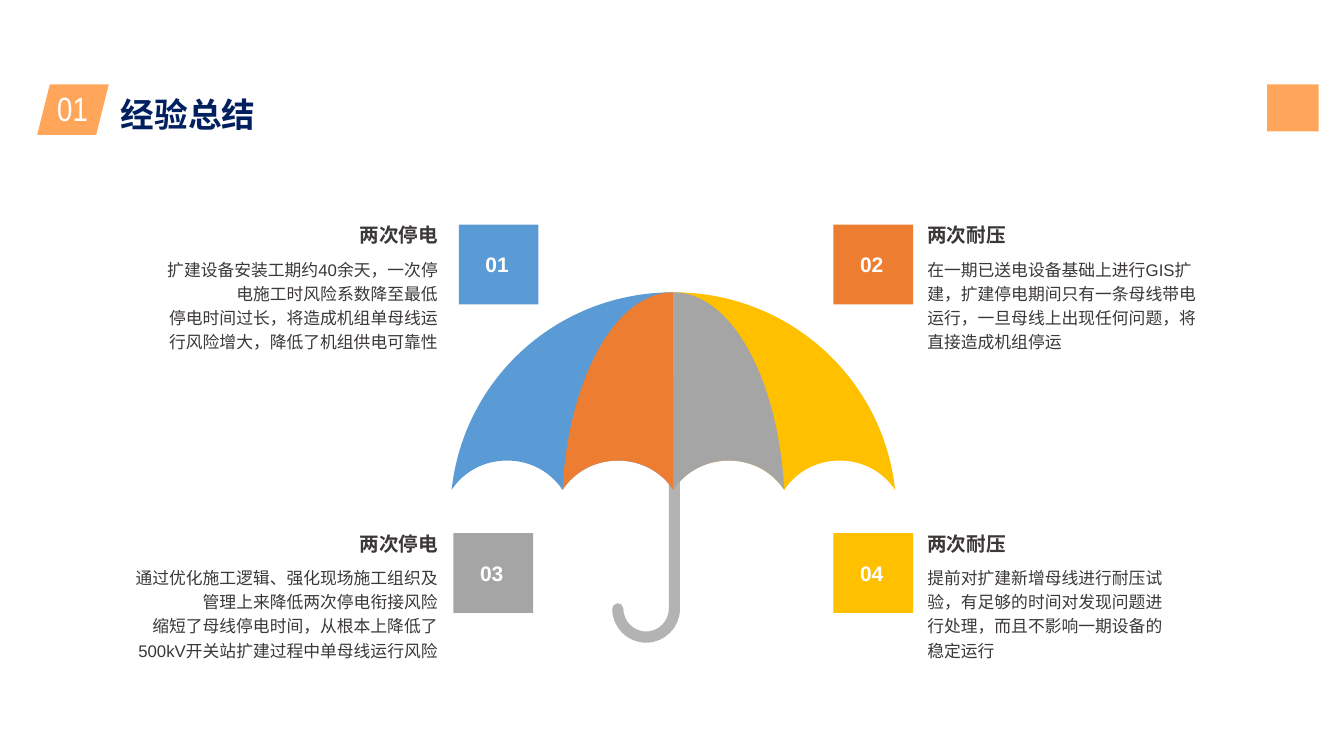
from dataclasses import dataclass

from lxml.etree import SubElement
from pptx import Presentation
from pptx.dml.color import RGBColor
from pptx.enum.lang import MSO_LANGUAGE_ID
from pptx.enum.shapes import MSO_SHAPE
from pptx.enum.text import MSO_ANCHOR, MSO_AUTO_SIZE, PP_ALIGN
from pptx.oxml.ns import qn
from pptx.shapes.autoshape import Shape
from pptx.shapes.shapetree import GroupShapes, SlideShapes
from pptx.text.text import TextFrame
from pptx.util import Pt

Point = tuple[float, float]
Segment = list[Point]

WHITE = RGBColor(0xFF, 0xFF, 0xFF)
NAVY = RGBColor(0x00, 0x20, 0x60)
CHARCOAL = RGBColor(0x3B, 0x38, 0x37)
PEACH = RGBColor(0xFF, 0xA6, 0x5B)
BLUE = RGBColor(0x5B, 0x9B, 0xD5)
ORANGE = RGBColor(0xED, 0x7D, 0x31)
GRAY = RGBColor(0xA5, 0xA5, 0xA5)
GOLD = RGBColor(0xFF, 0xC0, 0x00)
HANDLE_GRAY = RGBColor(0xB3, 0xB3, 0xB3)

SPINE_X, APEX_Y, RIM_Y = 481, 208.8, 349.9
SCALLOP_WIDTH, SCALLOP_Y = 79.2, 329
BADGE_SIZE = 56.9


@dataclass(frozen=True)
class Lesson:
    number: str
    heading: str
    details: list[str]
    top: float
    badge_left: float
    heading_left: float
    heading_width: float
    details_left: float
    details_width: float
    align: PP_ALIGN
    color: RGBColor


@dataclass(frozen=True)
class Panel:
    start: int
    end: int
    color: RGBColor


LESSONS = [
    Lesson("01", "两次停电",
           ["扩建设备安装工期约40余天，一次停电施工时风险系数降至最低",
            "停电时间过长，将造成机组单母线运行风险增大，降低了机组供电可靠性"],
           148.3, 327.7, 210.6, 102.4, 111.4, 201.4, PP_ALIGN.RIGHT, BLUE),
    Lesson("02", "两次耐压",
           ["在一期已送电设备基础上进行GIS扩建，扩建停电期间只有一条母线带电运行，"
            "一旦母线上出现任何问题，将直接造成机组停运"],
           148.3, 595.3, 662.4, 120.2, 662.4, 200.2, PP_ALIGN.LEFT, ORANGE),
    Lesson("03", "两次停电",
           ["通过优化施工逻辑、强化现场施工组织及管理上来降低两次停电衔接风险",
            "缩短了母线停电时间，从根本上降低了500kV开关站扩建过程中单母线运行风险"],
           368.7, 323.9, 210.6, 102.4, 88.6, 224.2, PP_ALIGN.RIGHT, GRAY),
    Lesson("04", "两次耐压",
           ["提前对扩建新增母线进行耐压试验，有足够的时间对发现问题进行处理，"
            "而且不影响一期设备的稳定运行"],
           368.7, 595.3, 662.4, 120.2, 662.4, 180, PP_ALIGN.LEFT, GOLD),
]

PANELS = [Panel(0, 2, GOLD), Panel(-2, 0, BLUE), Panel(-1, 0, ORANGE), Panel(0, 1, GRAY)]


def write_text(frame: TextFrame, paragraphs: list[str], *, size: float, color: RGBColor,
               font: str = "Arial", bold: bool = False, align: PP_ALIGN = PP_ALIGN.LEFT,
               anchor: MSO_ANCHOR = MSO_ANCHOR.TOP, spacing: float = 1.0,
               side_inset: float = 0, end_inset: float = 0) -> None:
    frame.word_wrap = True
    frame.auto_size = MSO_AUTO_SIZE.NONE
    frame.vertical_anchor = anchor
    frame.margin_left = frame.margin_right = Pt(side_inset)
    frame.margin_top = frame.margin_bottom = Pt(end_inset)
    frame.text = "\n".join(paragraphs)
    for paragraph in frame.paragraphs:
        paragraph.alignment = align
        paragraph.line_spacing = spacing
        paragraph.space_before = Pt(0)
        run_font = paragraph.runs[0].font
        run_font.name, run_font.size, run_font.bold = font, Pt(size), bold
        run_font.color.rgb = color
        run_font.language_id = MSO_LANGUAGE_ID.SIMPLIFIED_CHINESE
        SubElement(paragraph.runs[0]._r.rPr, qn("a:ea"), typeface=font)


def place(part: Shape, left: float, top: float, width: float, height: float) -> None:
    part.left, part.top, part.width, part.height = Pt(left), Pt(top), Pt(width), Pt(height)


def add_text(shapes: SlideShapes, left: float, top: float, width: float,
             height: float) -> TextFrame:
    return shapes.add_textbox(Pt(left), Pt(top), Pt(width), Pt(height)).text_frame


def paint(part: Shape, color: RGBColor) -> None:
    part.shadow.inherit = False
    part.fill.solid()
    part.fill.fore_color.rgb = color
    part.line.fill.background()


def add_block(shapes: SlideShapes, preset: MSO_SHAPE, left: float, top: float,
              width: float, height: float, color: RGBColor) -> None:
    paint(shapes.add_shape(preset, Pt(left), Pt(top), Pt(width), Pt(height)), color)


def rib(index: int) -> Segment:
    reach = index * SCALLOP_WIDTH
    curve = [(SPINE_X + reach, RIM_Y), (SPINE_X + 0.945 * reach, 270),
             (SPINE_X + 0.52 * reach, APEX_Y), (SPINE_X, APEX_Y)]
    return curve if index else [curve[0], curve[-1]]


def scallop(index: int) -> list[Segment]:
    left = SPINE_X + index * SCALLOP_WIDTH
    middle, right = left + SCALLOP_WIDTH / 2, left + SCALLOP_WIDTH
    return [[(left + 8.6, 337), (left + 23, SCALLOP_Y), (middle, SCALLOP_Y)],
            [(right - 23, SCALLOP_Y), (right - 8.6, 337), (right, RIM_Y)]]


def add_outline(shapes: GroupShapes, start: Point, segments: list[Segment],
                closed: bool) -> Shape:
    builder = shapes.build_freeform(Pt(start[0]), Pt(start[1]))
    builder.add_line_segments([(Pt(x), Pt(y)) for x, y in (s[-1] for s in segments)], close=closed)
    outline = builder.convert_to_shape()
    for line, segment in zip(list(outline._element.iter(qn("a:lnTo"))), segments):
        if len(segment) == 3:
            line.tag = qn("a:cubicBezTo")
            line.remove(line[0])
            for x, y in segment:
                SubElement(line, qn("a:pt"), x=str(Pt(x) - outline.left), y=str(Pt(y) - outline.top))
    return outline


def add_umbrella(shapes: SlideShapes) -> None:
    umbrella = shapes.add_group_shape().shapes
    radius, hook_y, handle_x = 20.2, 434.9, SPINE_X + 0.7
    middle, tip, bottom = handle_x - radius, handle_x - 2 * radius, hook_y + radius
    bend = 0.55 * radius
    hook = [[(tip, hook_y + bend), (middle - bend, bottom), (middle, bottom)],
            [(middle + bend, bottom), (handle_x, hook_y + bend), (handle_x, hook_y)],
            [(handle_x, 272.2)]]
    handle = add_outline(umbrella, (tip, hook_y), hook, False)
    handle.shadow.inherit = False
    handle.fill.background()
    handle.line.color.rgb = HANDLE_GRAY
    handle.line.width = Pt(8)
    handle._element.spPr.find(qn("a:ln")).set("cap", "rnd")
    for panel in PANELS:
        hem = [half for index in range(panel.start, panel.end) for half in scallop(index)]
        segments = [rib(panel.start)[-2::-1], *hem, rib(panel.end)[1:]]
        paint(add_outline(umbrella, (SPINE_X, APEX_Y), segments, True), panel.color)


def add_lesson(shapes: SlideShapes, body: Shape, lesson: Lesson) -> None:
    heading = add_text(shapes, lesson.heading_left, lesson.top, lesson.heading_width, 26.6)
    write_text(heading, [lesson.heading], size=14, color=CHARCOAL, bold=True,
               align=lesson.align, spacing=1.2, end_inset=7.7)
    place(body, lesson.details_left, lesson.top + 34, lesson.details_width, 46.6)
    write_text(body.text_frame, lesson.details, size=12, color=CHARCOAL,
               align=lesson.align, spacing=1.2)
    for paragraph in body.text_frame.paragraphs:
        properties = paragraph._p.get_or_add_pPr()
        properties.set("marL", "0")
        properties.set("indent", "0")
        SubElement(properties, qn("a:buNone"))
    add_block(shapes, MSO_SHAPE.RECTANGLE, lesson.badge_left, lesson.top + 12.2,
              BADGE_SIZE, BADGE_SIZE, lesson.color)
    number = add_text(shapes, lesson.badge_left + 4.3, lesson.top + 19.5, 46.1, 38.2)
    write_text(number, [lesson.number], size=15, color=WHITE, bold=True, align=PP_ALIGN.CENTER,
               anchor=MSO_ANCHOR.MIDDLE, spacing=1.2, end_inset=7.9)


def main() -> None:
    presentation = Presentation()
    presentation.slide_width, presentation.slide_height = Pt(960), Pt(540)
    slide = presentation.slides.add_slide(presentation.slide_layouts.get_by_name("Comparison"))
    shapes = slide.shapes
    title, *bodies = slide.placeholders
    add_block(shapes, MSO_SHAPE.PARALLELOGRAM, 26.6, 60.3, 51.1, 36, PEACH)
    section = add_text(shapes, 33.8, 59.6, 43.9, 36)
    write_text(section, ["01"], size=24, color=WHITE, font="Arial Narrow",
               side_inset=7.2, end_inset=3.6)
    place(title, 79.2, 63.4, 232.6, 36.7)
    write_text(title.text_frame, ["经验总结"], size=24, color=NAVY, font="Noto Sans CJK SC",
               bold=True, side_inset=7.2, end_inset=3.6)
    add_block(shapes, MSO_SHAPE.RECTANGLE, 905.2, 60.3, 36.7, 33.6, PEACH)
    add_umbrella(shapes)
    for body, lesson in zip(bodies, LESSONS):
        add_lesson(shapes, body, lesson)
    presentation.save("out.pptx")


if __name__ == "__main__":
    main()
